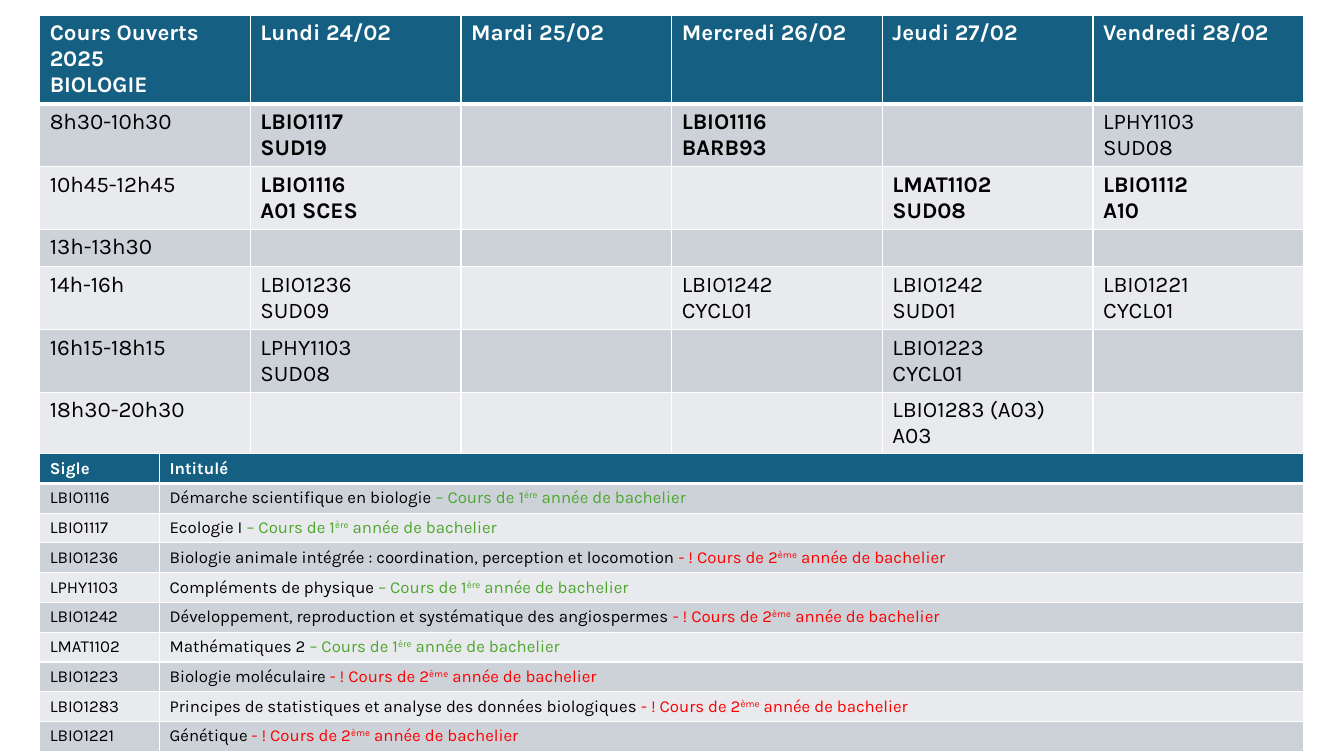
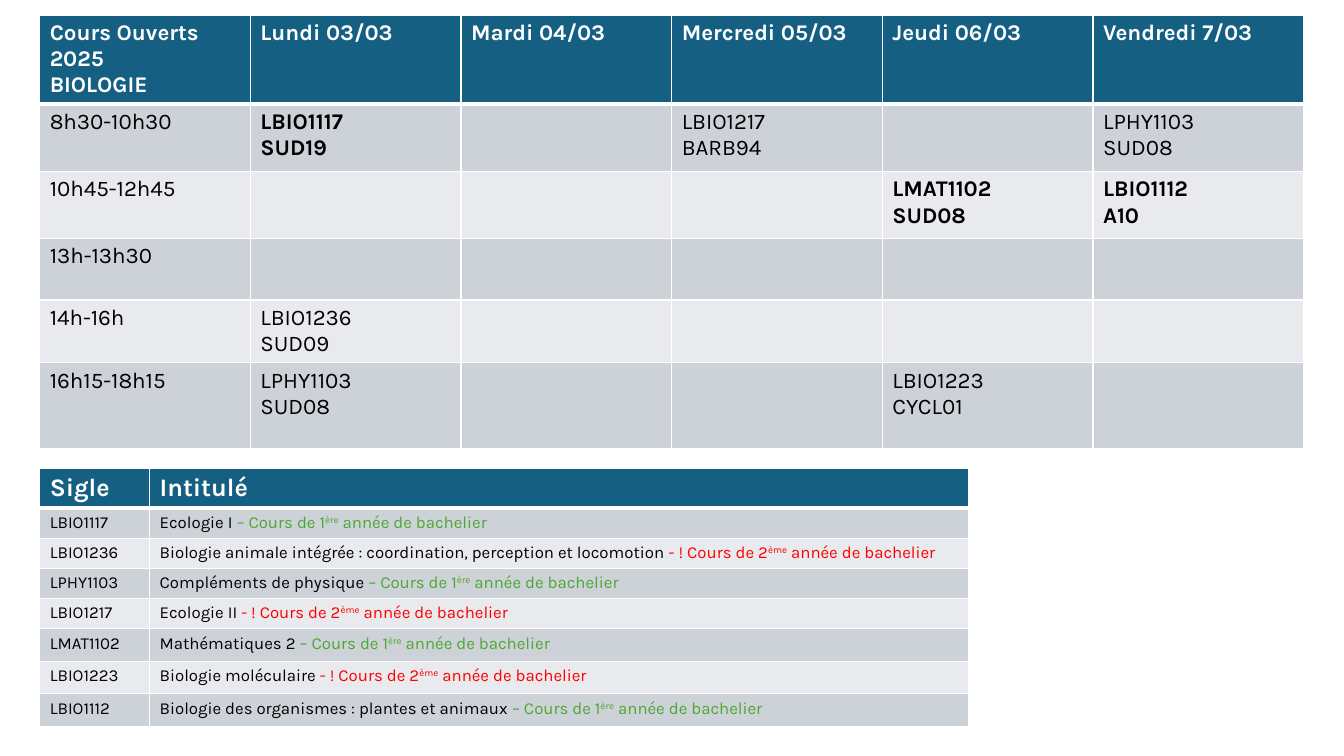
import lxml.etree
import pptx
import pptx.dml.color
import pptx.oxml.ns
import pptx.util

Cm = pptx.util.Cm
Pt = pptx.util.Pt


class Theme:
    font = "Karla"
    head, dark, light = "156082", "CCD2D8", "E8EAED"
    white, black, green, red = "FFFFFF", "000000", "4EA72E", "FF0000"
    big, mid, small = 18, 16, 12
    left, top, width = 1, 0.38, 31.86
    thin, thick = 1, 3


# Course titles and year of study
COURSES = {
    "LBIO1112": ("Biologie des organismes : plantes et animaux", 1),
    "LBIO1116": ("Démarche scientifique en biologie", 1),
    "LBIO1117": ("Ecologie I", 1),
    "LBIO1217": ("Ecologie II", 2),
    "LBIO1221": ("Génétique", 2),
    "LBIO1223": ("Biologie moléculaire", 2),
    "LBIO1236": ("Biologie animale intégrée : coordination, perception et locomotion", 2),
    "LBIO1242": ("Développement, reproduction et systématique des angiospermes", 2),
    "LBIO1283": ("Principes de statistiques et analyse des données biologiques", 2),
    "LMAT1102": ("Mathématiques 2", 1),
    "LPHY1103": ("Compléments de physique", 1),
}
YEARS = {1: ("– Cours de 1", "ère", Theme.green),
         2: ("- ! Cours de 2", "ème", Theme.red)}
STRONG = ("LBIO1112", "LBIO1116", "LBIO1117", "LMAT1102")
DAYS = ("Lundi", "Mardi", "Mercredi", "Jeudi", "Vendredi")


class Deck:
    def __init__(self):
        self.prs = pptx.Presentation()
        self.prs.slide_width, self.prs.slide_height = Cm(33.87), Cm(19.05)
        self.slide = None

    def page(self):
        self.slide = self.prs.slides.add_slide(self.prs.slide_layouts[6])

    def run(self, para, text, size, color, bold=False, raised=False):
        run = para.add_run()
        run.text = text
        font = run.font
        font.name, font.size, font.bold = Theme.font, Pt(size), bold
        font.color.rgb = pptx.dml.color.RGBColor.from_string(color)
        if raised:
            font._element.set("baseline", "30000")

    def text(self, cell, text, size, color=Theme.black, bold=False):
        frame = cell.text_frame
        for i, line in enumerate(text.split("\n")):
            para = frame.add_paragraph() if i else frame.paragraphs[0]
            if line:
                self.run(para, line, size, color, bold)
            else:
                # An empty cell keeps the type size, so its row stays low
                lxml.etree.SubElement(para._p, pptx.oxml.ns.qn("a:endParaRPr"),
                                      sz=str(size * 100))

    def edge(self, cell, row):
        """White borders, thicker under the header row."""
        props = cell._tc.get_or_add_tcPr()
        wide = {"T": row == 1, "B": row == 0}
        for side in "LRTB":
            width = Theme.thick if wide.get(side) else Theme.thin
            line = lxml.etree.SubElement(props, pptx.oxml.ns.qn("a:ln" + side),
                                         w=str(Pt(width)))
            fill = lxml.etree.SubElement(line, pptx.oxml.ns.qn("a:solidFill"))
            lxml.etree.SubElement(fill, pptx.oxml.ns.qn("a:srgbClr"), val=Theme.white)

    def table(self, top, cols, rows):
        """Empty banded table; cols and rows are sizes in centimetres."""
        grid = self.slide.shapes.add_table(
            len(rows), len(cols), Cm(Theme.left), Cm(top),
            Cm(sum(cols)), Cm(sum(rows))).table
        for col, width in zip(grid.columns, cols):
            col.width = Cm(width)
        for i, height in enumerate(rows):
            grid.rows[i].height = Cm(height)
            tint = Theme.head if i == 0 else Theme.dark if i % 2 else Theme.light
            for cell in grid.rows[i].cells:
                self.edge(cell, i)
                cell.fill.solid()
                cell.fill.fore_color.rgb = pptx.dml.color.RGBColor.from_string(tint)
        return grid

    def header(self, grid, names, size):
        for cell, name in zip(grid.rows[0].cells, names):
            self.text(cell, name, size, Theme.white, True)

    def week(self, dates, slots, rows):
        """Timetable: one row per time slot, one column per day."""
        grid = self.table(Theme.top, [Theme.width / 6] * 6, rows)
        names = [f"{day} {date}" for day, date in zip(DAYS, dates)]
        self.header(grid, ["Cours Ouverts 2025\nBIOLOGIE"] + names, Theme.mid)
        for i, (hour, items) in enumerate(slots.items(), 1):
            self.text(grid.cell(i, 0), hour, Theme.mid)
            for j in range(len(DAYS)):
                item = items.get(DAYS[j], "")
                self.text(grid.cell(i, j + 1), item, Theme.mid,
                          bold=item.startswith(STRONG))

    def key(self, top, cols, rows, codes, size):
        """List of course codes with title and year of study."""
        grid = self.table(top, cols, rows)
        self.header(grid, ("Sigle", "Intitulé"), size)
        for i, code in enumerate(codes, 1):
            title, year = COURSES[code]
            lead, rank, color = YEARS[year]
            self.text(grid.cell(i, 0), code, Theme.small)
            para = grid.cell(i, 1).text_frame.paragraphs[0]
            self.run(para, title + " ", Theme.small, Theme.black)
            self.run(para, lead, Theme.small, color)
            self.run(para, rank, Theme.small, color, raised=True)
            self.run(para, " année de bachelier", Theme.small, color)


def main():
    deck = Deck()

    # First week
    deck.page()
    deck.week(
        ("24/02", "25/02", "26/02", "27/02", "28/02"),
        {"8h30-10h30": {"Lundi": "LBIO1117\nSUD19", "Mercredi": "LBIO1116\nBARB93",
                        "Vendredi": "LPHY1103\nSUD08"},
         "10h45-12h45": {"Lundi": "LBIO1116\nA01 SCES", "Jeudi": "LMAT1102\nSUD08",
                         "Vendredi": "LBIO1112\nA10"},
         "13h-13h30": {},
         "14h-16h": {"Lundi": "LBIO1236\nSUD09", "Mercredi": "LBIO1242\nCYCL01",
                     "Jeudi": "LBIO1242\nSUD01", "Vendredi": "LBIO1221\nCYCL01"},
         "16h15-18h15": {"Lundi": "LPHY1103\nSUD08", "Jeudi": "LBIO1223\nCYCL01"},
         "18h30-20h30": {"Jeudi": "LBIO1283 (A03)\nA03"}},
        [2.24, 1.58, 1.58, 0.92, 1.58, 1.58, 1.58])
    deck.key(11.43, (3.02, 28.84), [0.75] * 10,
             ("LBIO1116", "LBIO1117", "LBIO1236", "LPHY1103", "LBIO1242",
              "LMAT1102", "LBIO1223", "LBIO1283", "LBIO1221"), Theme.small)

    # Second week
    deck.page()
    deck.week(
        ("03/03", "04/03", "05/03", "06/03", "7/03"),
        {"8h30-10h30": {"Lundi": "LBIO1117\nSUD19", "Mercredi": "LBIO1217\nBARB94",
                        "Vendredi": "LPHY1103\nSUD08"},
         "10h45-12h45": {"Jeudi": "LMAT1102\nSUD08", "Vendredi": "LBIO1112\nA10"},
         "13h-13h30": {},
         "14h-16h": {"Lundi": "LBIO1236\nSUD09"},
         "16h15-18h15": {"Lundi": "LPHY1103\nSUD08", "Jeudi": "LBIO1223\nCYCL01"}},
        [2.24, 1.7, 1.68, 1.56, 1.58, 2.16])
    deck.key(11.8, (2.77, 20.65), [0.96] + [0.76] * 4 + [0.82] * 3,
             ("LBIO1117", "LBIO1236", "LPHY1103", "LBIO1217", "LMAT1102",
              "LBIO1223", "LBIO1112"), Theme.big)

    deck.prs.save("out.pptx")


if __name__ == "__main__":
    main()
